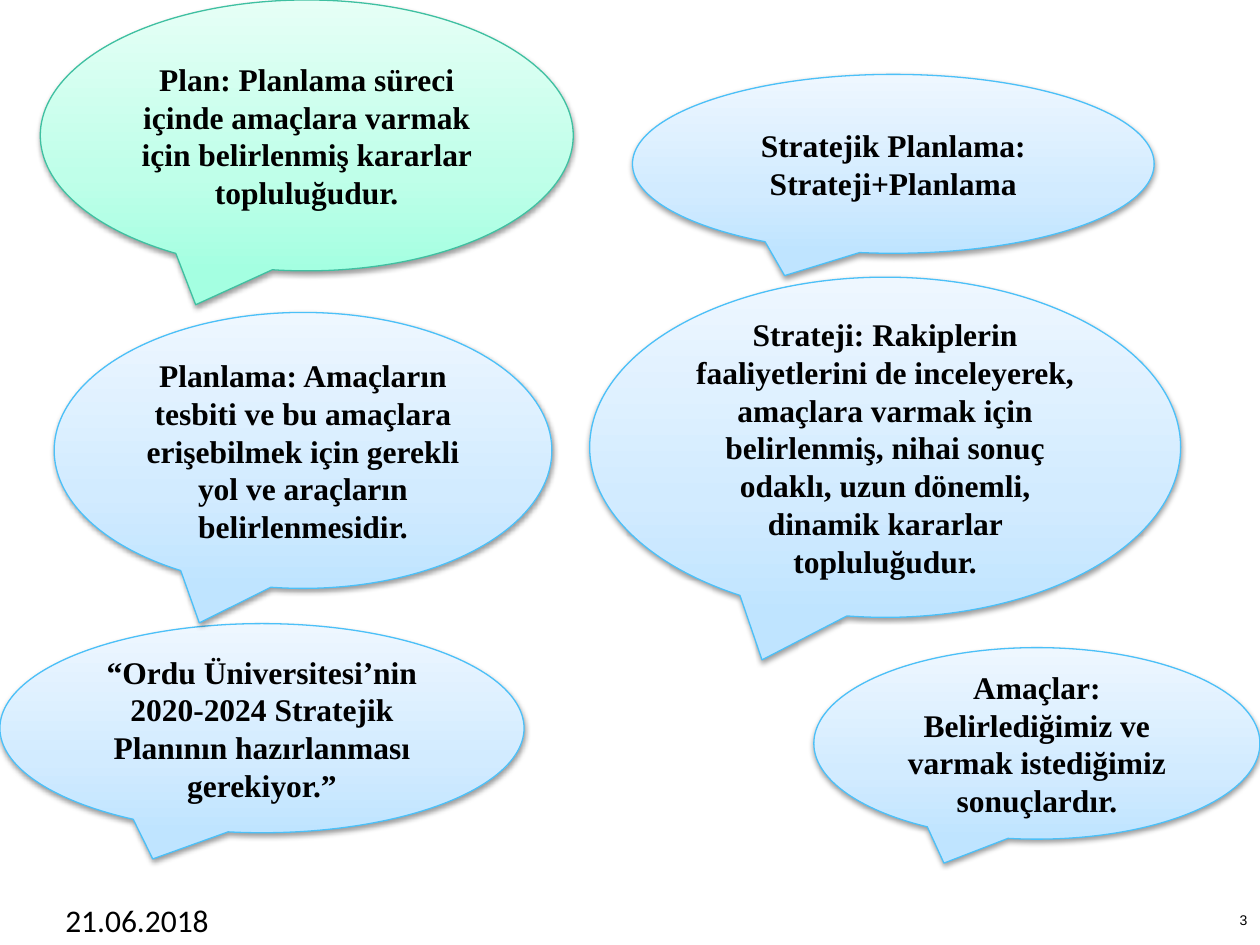
import copy

import pptx
import pptx.dml.color
import pptx.enum.shapes
import pptx.enum.text
import pptx.oxml
import pptx.oxml.ns
import pptx.util
from pptx.util import Inches

COLORS = {
    "text": "000000",
    "shadow": "000000",
    "blue": ("BFE4FF", "D2EBFF", "EEF7FF"),
    "blue_line": "4BC0F8",
    "green": ("A4FFE1", "BFFFE9", "E6FFF6"),
    "green_line": "3FC0A1",
}
STOPS = (0, 0.35, 1)
ALIGN = pptx.enum.text.PP_ALIGN
ANCHOR = pptx.enum.text.MSO_ANCHOR


def rgb(value):
    return pptx.dml.color.RGBColor.from_string(value)


class SlideBuilder:
    """Holds the style and the current slide."""

    def __init__(self, slide):
        self.slide = slide
        self.callout_font = "Times New Roman"

    def set_text(self, sp, text, font, size, align, anchor, bold=False):
        tf = sp.text_frame
        tf.word_wrap = True
        tf.vertical_anchor = anchor
        p = tf.paragraphs[0]
        p.text = text
        p.alignment = align
        p.font.name = font
        p.font.size = pptx.util.Pt(size)
        p.font.bold = bold
        p.font.color.rgb = rgb(COLORS["text"])

    def label(self, box, text, font, size, align=ALIGN.LEFT, anchor=ANCHOR.TOP):
        sp = self.slide.shapes.add_textbox(*map(Inches, box))
        self.set_text(sp, text, font, size, align, anchor)
        return sp

    def gradient(self, sp, colors):
        sp.fill.gradient()
        sp.fill.gradient_angle = 90
        # The default gradient has two stops; a third is added
        gs_list = sp._element.spPr.find(".//" + pptx.oxml.ns.qn("a:gsLst"))
        gs_list.append(copy.deepcopy(gs_list[0]))
        for stop, position, color in zip(sp.fill.gradient_stops, STOPS, colors):
            stop.position = position
            stop.color.rgb = rgb(color)

    def shadow(self, sp):
        sp.shadow.inherit = False
        effects = sp._element.spPr.find(pptx.oxml.ns.qn("a:effectLst"))
        effects.append(pptx.oxml.parse_xml(
            f'<a:outerShdw {pptx.oxml.ns.nsdecls("a")} blurRad="40000" dist="20000" '
            f'dir="5400000" rotWithShape="0"><a:srgbClr val="{COLORS["shadow"]}">'
            '<a:alpha val="38000"/></a:srgbClr></a:outerShdw>'))

    def callout(self, box, text, color="blue"):
        sp = self.slide.shapes.add_shape(
            pptx.enum.shapes.MSO_SHAPE.OVAL_CALLOUT, *map(Inches, box))
        self.gradient(sp, COLORS[color])
        sp.line.color.rgb = rgb(COLORS[color + "_line"])
        sp.line.width = pptx.util.Pt(0.75)
        self.shadow(sp)
        self.set_text(sp, text, self.callout_font, 18, ALIGN.CENTER, ANCHOR.MIDDLE, True)


def main():
    prs = pptx.Presentation()
    prs.slide_width, prs.slide_height = Inches(10), Inches(7.5)
    builder = SlideBuilder(prs.slides.add_slide(prs.slide_layouts[6]))

    # Date and page number
    builder.label((0.42, 7.1, 2.33, 0.4), "21.06.2018", "Calibri", 18)
    number = builder.label((7.57, 7.1, 2.33, 0.4), "3", "Arial", 8,
                           ALIGN.RIGHT, ANCHOR.MIDDLE)
    tf = number.text_frame
    tf.margin_left = tf.margin_top = tf.margin_right = tf.margin_bottom = 0

    # Speech bubbles, back to front
    builder.callout((0, 4.95, 4.16, 1.66),
                    "“Ordu Üniversitesi’nin 2020-2024 Stratejik Planının "
                    "hazırlanması gerekiyor.”")
    builder.callout((4.68, 2.2, 4.69, 2.7),
                    "Strateji: Rakiplerin faaliyetlerini de inceleyerek, amaçlara "
                    "varmak için belirlenmiş, nihai sonuç odaklı, uzun dönemli, "
                    "dinamik kararlar topluluğudur.")
    builder.callout((0.43, 2.48, 3.95, 2.19),
                    "Planlama: Amaçların tesbiti ve bu amaçlara erişebilmek için "
                    "gerekli yol ve araçların belirlenmesidir.")
    builder.callout((0.32, 0, 4.23, 2.15),
                    "Plan: Planlama süreci içinde amaçlara varmak için belirlenmiş "
                    "kararlar topluluğudur.", "green")
    builder.callout((6.46, 5.14, 3.54, 1.52),
                    "Amaçlar: Belirlediğimiz ve varmak istediğimiz sonuçlardır.")
    builder.callout((5.02, 0.59, 4.14, 1.42),
                    "Stratejik Planlama: Strateji+Planlama")

    prs.save("out.pptx")


if __name__ == "__main__":
    main()
